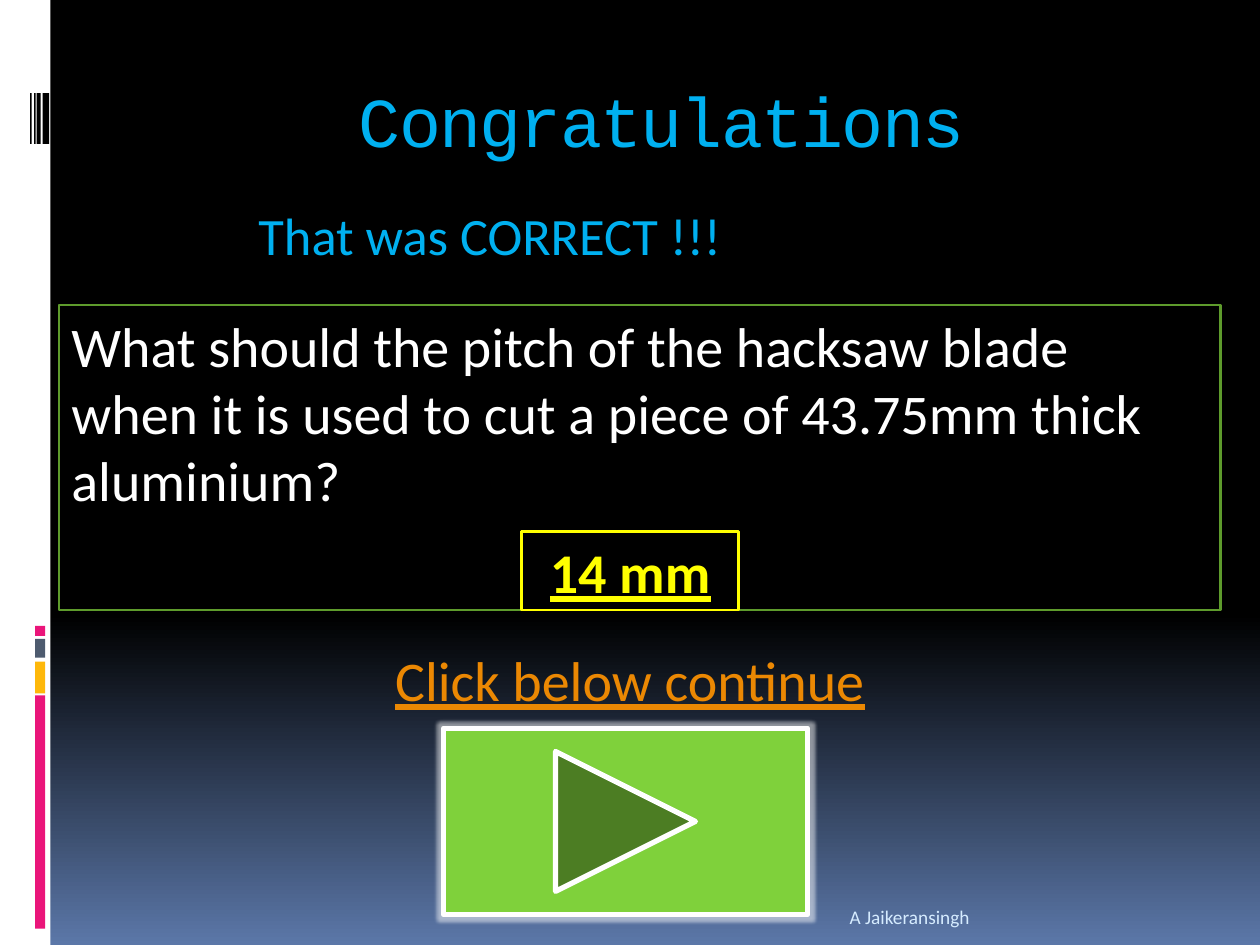
from dataclasses import dataclass, field
from typing import Optional

from lxml.etree import SubElement
from pptx import Presentation
from pptx.dml.color import RGBColor
from pptx.enum.shapes import MSO_SHAPE as Geo
from pptx.enum.text import MSO_ANCHOR as Anchor, PP_ALIGN as Align
from pptx.oxml.ns import qn
from pptx.util import Cm, Pt


@dataclass
class Box:
    left: float
    top: float
    width: float
    height: float
    fill: Optional[str] = None
    line: Optional[str] = None
    weight: float = 1.5
    geo: Geo = Geo.RECTANGLE


@dataclass
class Label:
    text: str
    color: str
    size: float
    font: str = "Calibri"
    align: Align = Align.LEFT
    anchor: Anchor = Anchor.TOP
    style: dict = field(default_factory=dict)


def rgb(value: str) -> RGBColor:
    return RGBColor.from_string(value)


def place(sp, box: Box) -> None:
    for name in ("left", "top", "width", "height"):
        setattr(sp, name, Cm(getattr(box, name)))


def draw_box(shapes, box: Box):
    sp = shapes.add_shape(box.geo, 0, 0, 0, 0)
    place(sp, box)
    sp.shadow.inherit = False
    if box.fill:
        sp.fill.solid()
        sp.fill.fore_color.rgb = rgb(box.fill)
    else:
        sp.fill.background()
    if box.line:
        sp.line.color.rgb = rgb(box.line)
        sp.line.width = Pt(box.weight)
    else:
        sp.line.fill.background()
    return sp


def write(sp, label: Label):
    tf = sp.text_frame
    tf.word_wrap = True
    tf.vertical_anchor = label.anchor
    p = tf.paragraphs[0]
    p.alignment = label.align
    r = p.add_run()
    r.text = label.text
    r.font.color.rgb = rgb(label.color)
    fmt = {"name": label.font, "size": Pt(label.size), **label.style}
    for name, value in fmt.items():
        setattr(r.font, name, value)
    return p


def draw_label(shapes, box: Box, label: Label):
    sp = shapes.add_textbox(0, 0, 0, 0)
    place(sp, box)
    return write(sp, label)


def add_glow(sp, color: str, radius: float, alpha: int) -> None:
    effects = sp._element.spPr.find(qn("a:effectLst"))
    glow = SubElement(effects, qn("a:glow"), rad=str(Pt(radius)))
    clr = SubElement(glow, qn("a:srgbClr"), val=color)
    SubElement(clr, qn("a:alpha"), val=str(alpha * 1000))


SIDE_BARS = [Box(0, 0, 1.02, 19.05, "FFFFFF")]
SIDE_BARS += [Box(0.71, top, 0.2, height, color) for top, height, color in (
    (14.02, 4.7, "EA157A"), (13.34, 0.64, "FEB80A"),
    (12.88, 0.38, "4E5B6F"), (12.62, 0.2, "EA157A"))]
SIDE_BARS += [Box(left, 1.88, width, 1.02, "000000") for left, width in (
    (0.86, 0.13), (0.74, 0.08), (0.69, 0.03), (0.61, 0.03))]


def main() -> None:
    prs = Presentation()
    prs.slide_width, prs.slide_height = Cm(25.4), Cm(19.05)
    s = prs.slides.add_slide(prs.slide_layouts[5])
    shapes = s.shapes

    # Background: black fading to blue at the bottom
    bg = s.background.fill
    bg.gradient()
    bg.gradient_angle = 270
    for stop, (pos, color) in zip(bg.gradient_stops, ((0.65, "000000"), (1, "5B77A8"))):
        stop.position = pos
        stop.color.rgb = rgb(color)

    # Side strip
    for bar in SIDE_BARS:
        draw_box(shapes, bar)

    # Title and praise
    place(shapes.title, Box(2.54, 1.42, 21.59, 2.54))
    p = write(shapes.title, Label("Congratulations", "00B0F0", 40, "Courier New",
                                  Align.CENTER, Anchor.MIDDLE))
    shapes.title.text_frame.margin_bottom = Cm(0.7)
    p.runs[0].font._element.set("spc", "-100")
    p = draw_label(shapes, Box(4.75, 3.96, 14.4, 2.69),
                   Label("That was CORRECT !!!", "00B0F0", 30))
    p.space_before = Pt(7)
    pPr = p._p.get_or_add_pPr()
    pPr.set("marL", str(Cm(1.14)))
    pPr.set("indent", str(Cm(-0.93)))

    # Prompt and forward button
    draw_label(shapes, Box(0, 8.33, 25.4, 10.72),
               Label("Click below continue", "EB8803", 32, align=Align.CENTER,
                     anchor=Anchor.MIDDLE, style={"underline": True}))
    button = draw_box(shapes, Box(8.94, 14.68, 7.34, 3.76, "7FD13B", "FFFFFF", 3,
                                  Geo.ACTION_BUTTON_FORWARD_OR_NEXT))
    add_glow(button, "FFFFFF", 4, 50)

    # Question and answer
    draw_box(shapes, Box(1.19, 6.15, 23.42, 6.15, line="5E9B2C"))
    draw_label(shapes, Box(1.19, 6.15, 23.22, 4.37),
               Label("What should the pitch of the hacksaw blade when it is used "
                     "to cut a piece of 43.75mm thick aluminium?", "FFFFFF", 32))
    answer = draw_box(shapes, Box(10.52, 10.72, 4.37, 1.58, line="FFFF00"))
    write(answer, Label("14 mm", "FFFF00", 32, align=Align.CENTER, anchor=Anchor.MIDDLE,
                        style={"bold": True, "underline": True}))

    # Footer, clear of the button's right edge
    draw_label(shapes, Box(16.6, 17.83, 3.2, 1.02),
               Label("A Jaikeransingh", "D6ECFF", 11, align=Align.RIGHT,
                     anchor=Anchor.BOTTOM))
    prs.save("out.pptx")


if __name__ == "__main__":
    main()
